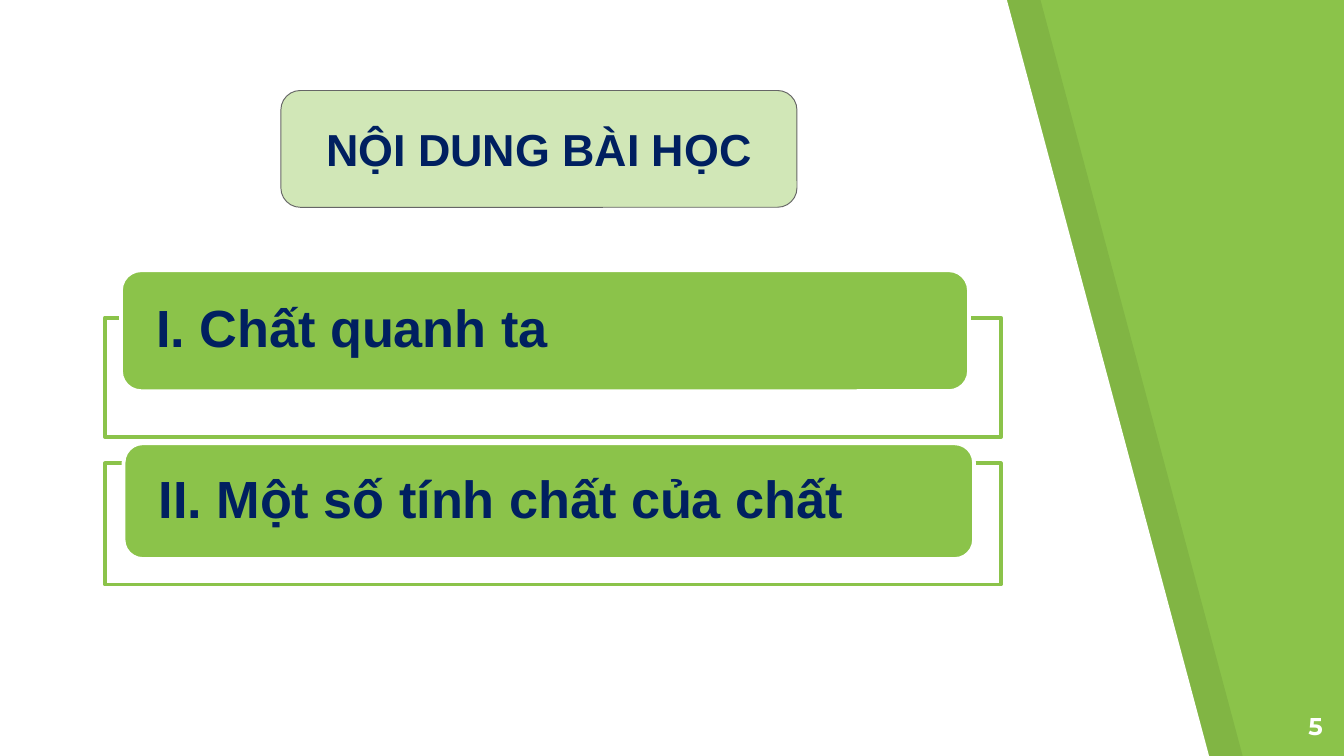
import pptx
import pptx.dml.color
import pptx.enum.shapes
import pptx.enum.text
import pptx.oxml.ns
import pptx.util
from lxml import etree

Pt = pptx.util.Pt
SHAPE = pptx.enum.shapes.MSO_SHAPE
ALIGN = pptx.enum.text.PP_ALIGN
ANCHOR = pptx.enum.text.MSO_ANCHOR

COLORS = {
    "green": "8BC34A",
    "pale": "D1E7B7",
    "navy": "002060",
    "gray": "666666",
    "white": "FFFFFF",
    "black": "000000",
}


def color(name):
    return pptx.dml.color.RGBColor.from_string(COLORS[name])


def paint(shape, fill, line=None, weight=1, alpha=100):
    """Set fill, opacity in percent and outline."""
    shape.shadow.inherit = False
    shape.fill.solid()
    shape.fill.fore_color.rgb = color(fill)
    if alpha < 100:
        tone = shape.fill._xPr.find(".//" + pptx.oxml.ns.qn("a:srgbClr"))
        etree.SubElement(tone, pptx.oxml.ns.qn("a:alpha"), val=str(alpha * 1000))
    if line:
        shape.line.color.rgb = color(line)
        shape.line.width = Pt(weight)
    else:
        shape.line.fill.background()


def write(shape, text, size=28, font="Arial", tint="navy", align=ALIGN.LEFT,
          anchor=ANCHOR.MIDDLE, side=7.2, edge=0, space=1.0):
    frame = shape.text_frame
    frame.word_wrap = True
    frame.vertical_anchor = anchor
    frame.margin_left = frame.margin_right = Pt(side)
    frame.margin_top = frame.margin_bottom = Pt(edge)
    para = frame.paragraphs[0]
    para.alignment = align
    para.line_spacing = space
    run = para.add_run()
    run.text = text
    run.font.size = Pt(size)
    run.font.name = font
    run.font.bold = True
    run.font.color.rgb = color(tint)


def add_box(slide, kind, left, top, width, height, **look):
    box = slide.shapes.add_shape(kind, Pt(left), Pt(top), Pt(width), Pt(height))
    paint(box, **look)
    return box


def add_panel(slide, left, **look):
    """Slanted panel, open to the left of the slide."""
    top, low = -0.5, 406
    form = slide.shapes.build_freeform(Pt(left), Pt(top))
    form.add_line_segments([
        (Pt(left), Pt(low)),
        (Pt(left + 648), Pt(low)),
        (Pt(left + 539.3), Pt(top)),
    ])
    paint(form.convert_to_shape(), **look)


def add_topic(slide, text, frame, label):
    """Outlined frame with a rounded label on top of it."""
    add_box(slide, SHAPE.RECTANGLE, *frame,
            fill="white", line="green", weight=2, alpha=90)
    box = add_box(slide, SHAPE.ROUNDED_RECTANGLE, *label,
                  fill="green", line="white", weight=2)
    write(box, text, side=15.8, space=0.9)


def main():
    deck = pptx.Presentation()
    deck.slide_width, deck.slide_height = Pt(720), Pt(405)
    slide = deck.slides.add_slide(deck.slide_layouts[6])

    # Green ground, shaded edge and white panel
    ground = slide.background.fill
    ground.solid()
    ground.fore_color.rgb = color("green")
    add_panel(slide, 18, fill="black", alpha=7)
    add_panel(slide, 0, fill="white")

    # Slide number
    num = slide.shapes.add_textbox(Pt(672.5), Pt(373.7), Pt(43.2), Pt(31))
    write(num, "5", size=13, font="Montserrat", tint="white",
          align=ALIGN.RIGHT, anchor=ANCHOR.TOP, edge=7.2)

    # Topics
    topics = [
        ("I. Chất quanh ta",
         (56.2, 170.2, 480, 64), (64.8, 144.8, 454.3, 64.8)),
        ("II. Một số tính chất của chất",
         (56.2, 248.2, 480, 65), (66.2, 237.5, 455.6, 62)),
    ]
    for topic in topics:
        add_topic(slide, *topic)

    # Title
    title = add_box(slide, SHAPE.ROUNDED_RECTANGLE, 150.5, 48.5, 276.5, 62.6,
                    fill="pale", line="gray", weight=0.5)
    write(title, "NỘI DUNG BÀI HỌC", size=24, align=ALIGN.CENTER)

    deck.save("out.pptx")


if __name__ == "__main__":
    main()
